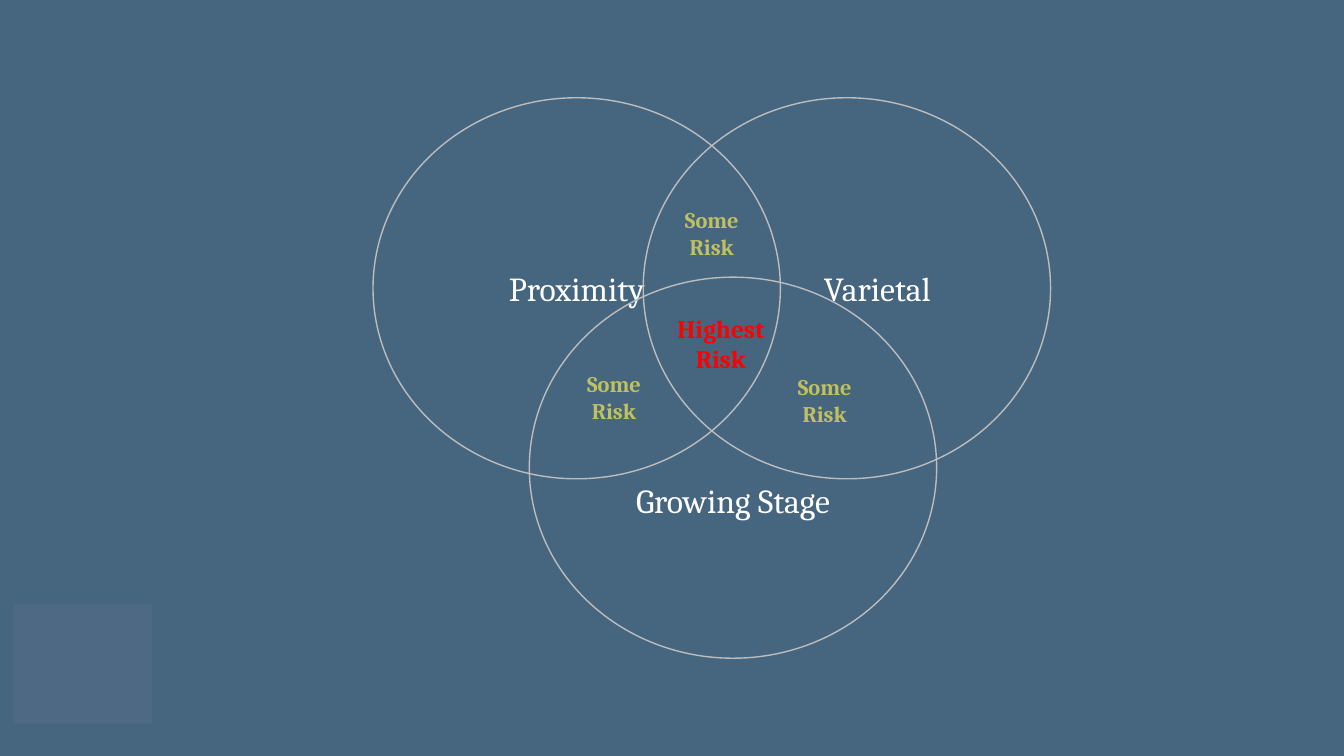
from pptx import Presentation
from pptx.dml.color import RGBColor
from pptx.enum.shapes import MSO_SHAPE
from pptx.enum.text import MSO_ANCHOR, PP_ALIGN
from pptx.util import Inches, Pt

OVAL, RECT = MSO_SHAPE.OVAL, MSO_SHAPE.RECTANGLE
MIDDLE = MSO_ANCHOR.MIDDLE
LEFT, CENTER = PP_ALIGN.LEFT, PP_ALIGN.CENTER

FONT = "Cambria"
BACKGROUND, OUTLINE, PATCH = "46657F", "BCBDBC", "4D6983"
WHITE, RED, OLIVE = "FFFFFF", "FF0000", "BFC060"
CIRCLE_W, CIRCLE_H = 4.04, 3.78


def rgb(value):
    return RGBColor.from_string(value)


def write(tf, text, size, color, bold=False, align=CENTER):
    tf.word_wrap = True
    tf.text = text
    p = tf.paragraphs[0]
    p.alignment = align
    font = p.runs[0].font
    font.name, font.size, font.bold = FONT, Pt(size), bold
    font.color.rgb = rgb(color)


def add_circle(s, x, y, text, align=CENTER, indent=0.1, drop=0.05):
    """Outlined factor circle; indent and drop are its left and top text insets."""
    sp = s.shapes.add_shape(OVAL, Inches(x), Inches(y), Inches(CIRCLE_W), Inches(CIRCLE_H))
    sp.shadow.inherit = False
    sp.fill.background()
    sp.line.color.rgb = rgb(OUTLINE)
    sp.line.width = Pt(1)
    tf = sp.text_frame
    tf.vertical_anchor = MIDDLE
    tf.margin_left, tf.margin_top = Inches(indent), Inches(drop)
    write(tf, text, 24, WHITE, align=align)


def add_risk(s, x, y, w, h, text, size, color):
    sp = s.shapes.add_textbox(Inches(x), Inches(y), Inches(w), Inches(h))
    write(sp.text_frame, text, size, color, bold=True)


def add_venn(s, x, y):
    """Three overlapping circles with a risk label in every overlap."""
    add_circle(s, x, y, "Proximity")
    add_circle(s, x + 2.68, y, "Varietal", align=LEFT, indent=1.2)
    add_circle(s, x + 1.55, y + 1.78, "Growing Stage", drop=0.69)

    # Overlap of all three, then of each pair
    add_risk(s, x + 2.88, y + 2.09, 1.14, 0.71, "Highest Risk", 18, RED)
    for dx, dy in ((2.88, 1.03), (1.91, 2.65), (4, 2.68)):
        add_risk(s, x + dx, y + dy, 0.96, 0.64, "Some Risk", 16, OLIVE)


def add_corner_patch(s, x, y, w, h):
    sp = s.shapes.add_shape(RECT, Inches(x), Inches(y), Inches(w), Inches(h))
    sp.shadow.inherit = False
    sp.fill.solid()
    sp.fill.fore_color.rgb = rgb(PATCH)
    sp.line.fill.background()


def main():
    prs = Presentation()
    prs.slide_width, prs.slide_height = Inches(13.33), Inches(7.5)
    s = prs.slides.add_slide(prs.slide_layouts[6])
    s.background.fill.solid()
    s.background.fill.fore_color.rgb = rgb(BACKGROUND)
    add_venn(s, 3.7, 0.97)
    add_corner_patch(s, 0.13, 5.99, 1.38, 1.19)
    prs.save("out.pptx")


if __name__ == "__main__":
    main()
